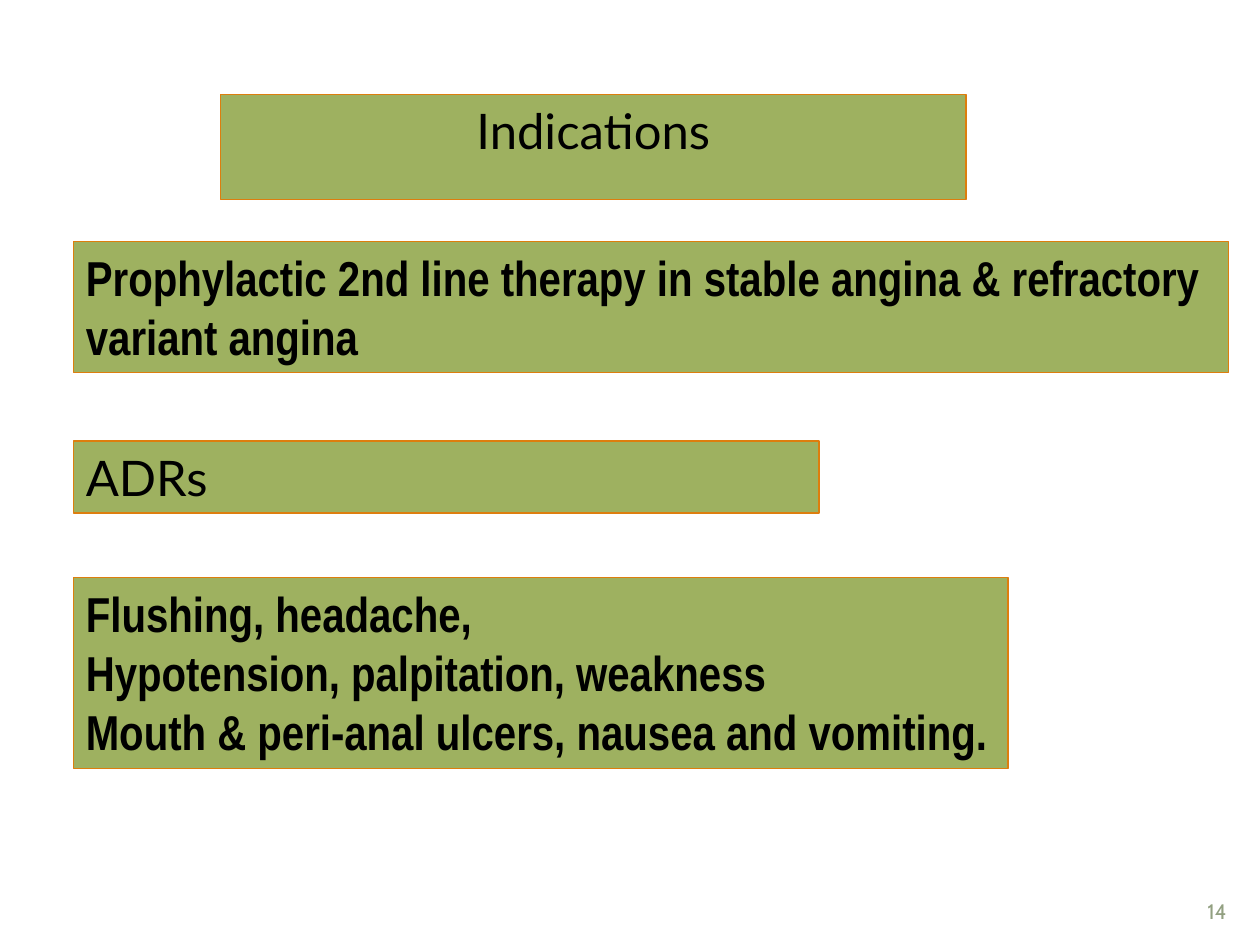
from pptx import Presentation
from pptx import util as u
from pptx.dml.color import RGBColor
from pptx.enum import shapes, text

COLORS = {"panel": "9EB160", "border": "DD7E0E", "ink": "000000", "number": "92A081"}
HEADING_FONT = "Lato"
BODY_FONT = "Arial Narrow"
NUMBER_FONT = "Cabin"
LEFT = 42


def rgb(name):
    return RGBColor.from_string(COLORS[name])


class SlideBuilder:
    """Holds the panel style and the slide being filled; lengths are points."""

    def __init__(self, slide):
        self.slide = slide

    def set_text(self, shape, lines, font, size, color, bold=False,
                 align=text.PP_ALIGN.LEFT):
        frame = shape.text_frame
        frame.word_wrap = True
        frame.vertical_anchor = text.MSO_ANCHOR.TOP
        frame.text = "\n".join(lines)
        for paragraph in frame.paragraphs:
            paragraph.alignment = align
            paragraph.font.name = font
            paragraph.font.size = u.Pt(size)
            paragraph.font.bold = bold
            paragraph.font.color.rgb = rgb(color)

    def style_panel(self, shape, lines, **style):
        shape.fill.solid()
        shape.fill.fore_color.rgb = rgb("panel")
        shape.line.color.rgb = rgb("border")
        shape.line.width = u.Pt(0.75)
        self.set_text(shape, lines, size=28, color="ink", **style)
        shape.text_frame.auto_size = text.MSO_AUTO_SIZE.SHAPE_TO_FIT_TEXT

    def title(self, left, top, width, height, line):
        shape = self.slide.shapes.title
        shape.left, shape.top = u.Pt(left), u.Pt(top)
        shape.width, shape.height = u.Pt(width), u.Pt(height)
        self.style_panel(shape, [line], font=HEADING_FONT,
                         align=text.PP_ALIGN.CENTER)

    def panel(self, top, width, height, lines, **style):
        shape = self.slide.shapes.add_shape(
            shapes.MSO_SHAPE.RECTANGLE,
            u.Pt(LEFT), u.Pt(top), u.Pt(width), u.Pt(height))
        shape.shadow.inherit = False
        self.style_panel(shape, lines, **style)

    def page_number(self, left, top, width, height, number):
        box = self.slide.shapes.add_textbox(
            u.Pt(left), u.Pt(top), u.Pt(width), u.Pt(height))
        self.set_text(box, [number], NUMBER_FONT, 12, "number",
                      align=text.PP_ALIGN.RIGHT)


def main():
    presentation = Presentation()
    presentation.slide_width, presentation.slide_height = u.Pt(720), u.Pt(540)
    title_only = presentation.slide_layouts[5]
    builder = SlideBuilder(presentation.slides.add_slide(title_only))

    builder.title(126, 54, 426, 41.2, "Indications")
    builder.panel(138, 660, 75, [
        "Prophylactic 2nd line therapy in stable angina & refractory variant angina",
    ], font=BODY_FONT, bold=True)
    builder.panel(252, 426, 41.2, ["ADRs"], font=HEADING_FONT)
    builder.panel(330, 534, 109, [
        "Flushing, headache,",
        "Hypotension, palpitation, weakness",
        "Mouth & peri-anal ulcers, nausea and vomiting.",
    ], font=BODY_FONT, bold=True)
    builder.page_number(648, 510, 60, 19.5, "14")

    presentation.save("out.pptx")


if __name__ == "__main__":
    main()
